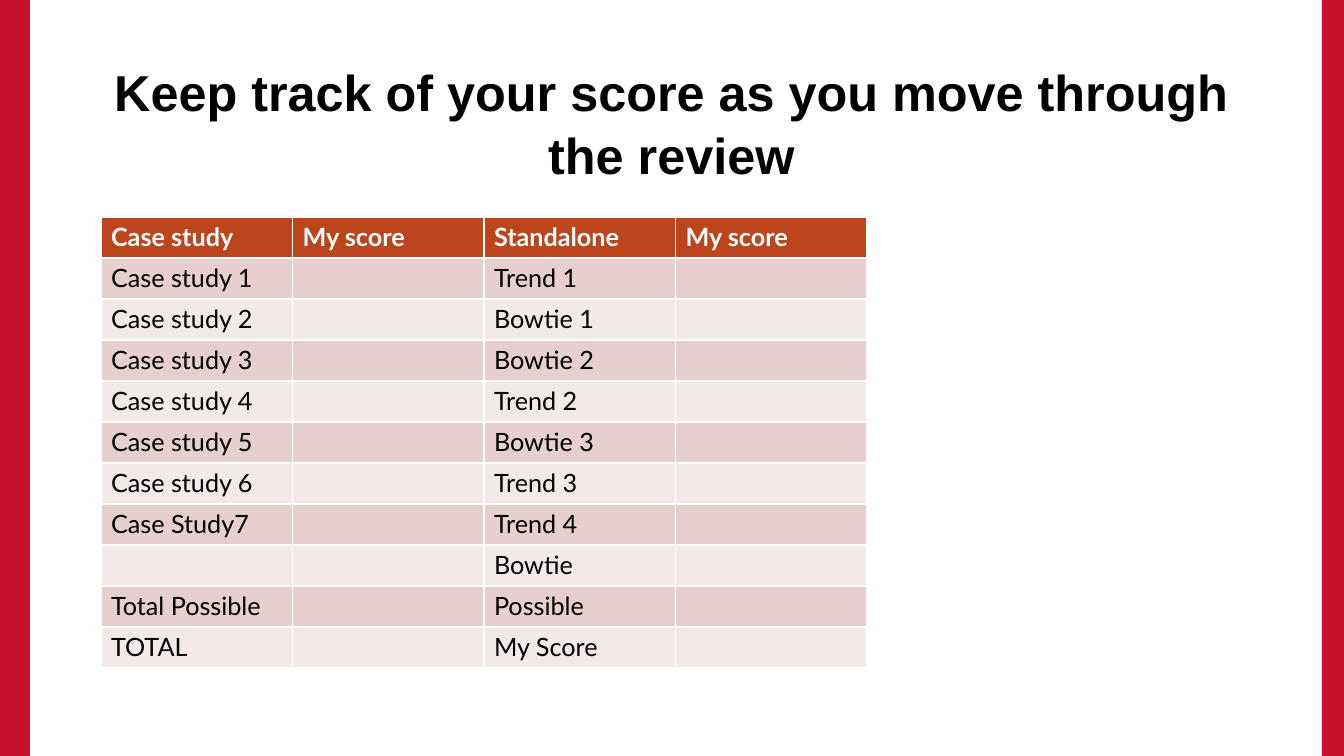
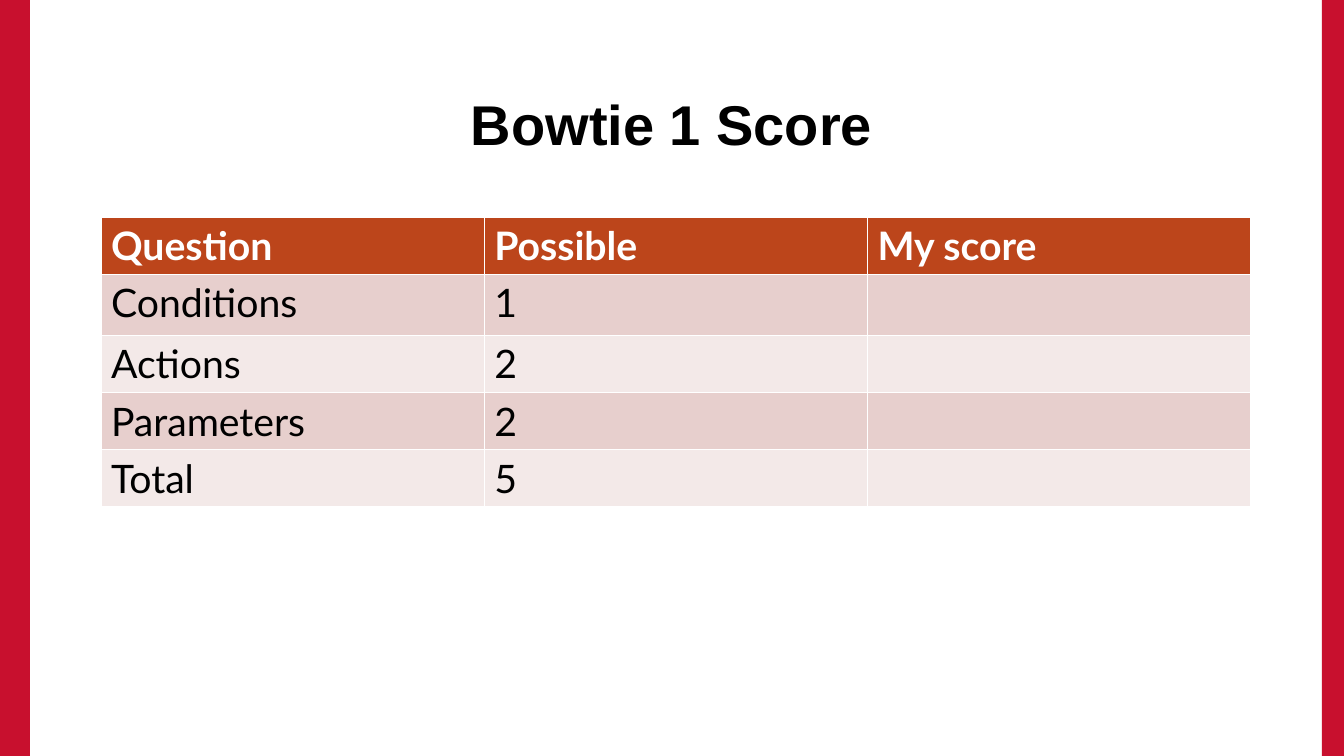
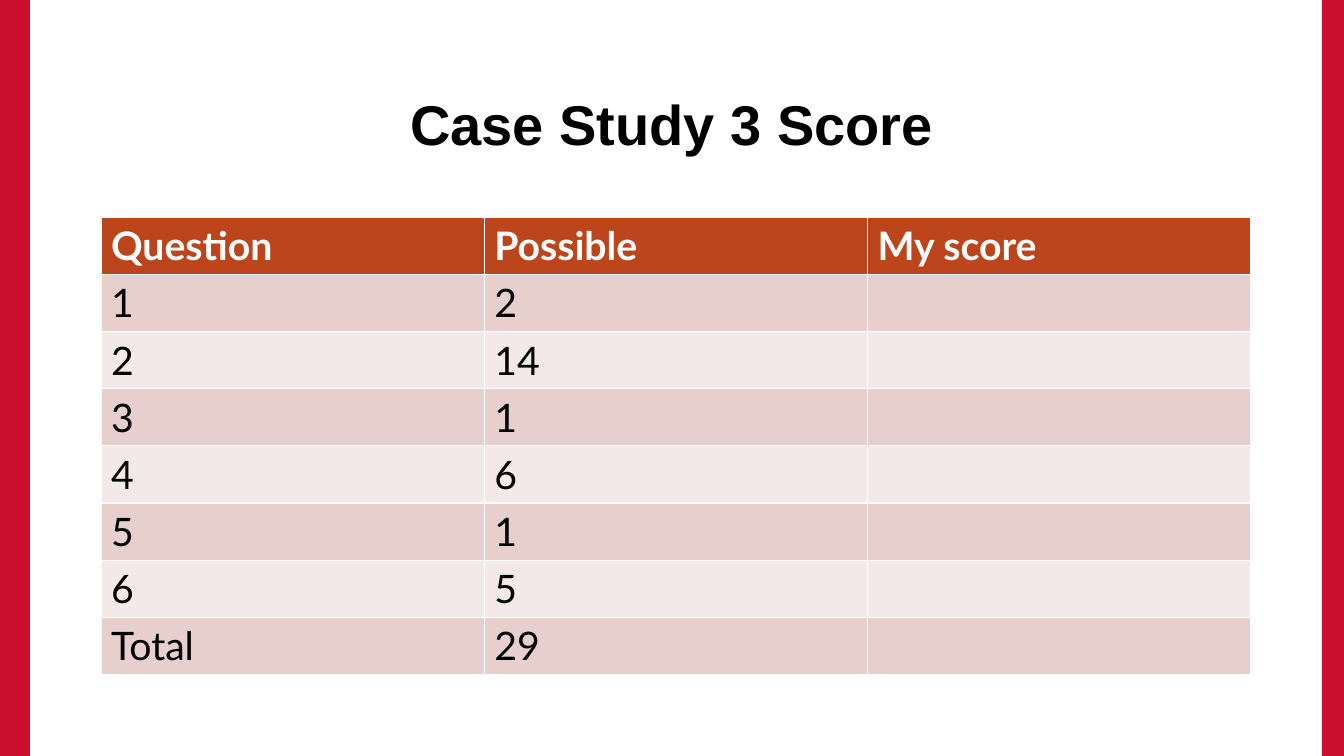
from pptx import Presentation
from pptx.dml.color import RGBColor
from pptx.enum.shapes import MSO_SHAPE
from pptx.enum.text import MSO_ANCHOR, PP_ALIGN
from pptx.util import Emu, Pt


def px(length):
    return Emu(round(length * 914400 / 100.8))


def color(value):
    return RGBColor.from_string(value)


class ScoreDeck:
    """Holds the shared style and the current slide of a score-sheet deck."""

    WIDTH, HEIGHT = 1344, 756
    LEFT_BAND, RIGHT_BAND = 30, 22
    RED, RUST = "C8102E", "BC451B"
    STRIPES = ("E7CFCD", "F3E9E8")
    BLACK, WHITE = "000000", "FFFFFF"
    TITLE_FONT, TABLE_FONT = "Arial", "Lato"
    MARGIN, TABLE_TOP = 101, 217

    def __init__(self):
        self.deck = Presentation()
        self.deck.slide_width = px(self.WIDTH)
        self.deck.slide_height = px(self.HEIGHT)
        self.page = None

    def add_page(self, title, title_size):
        self.page = self.deck.slides.add_slide(self.deck.slide_layouts[6])
        self.add_band(0, self.LEFT_BAND)
        self.add_band(self.WIDTH - self.RIGHT_BAND, self.RIGHT_BAND)
        self.add_title(title, title_size)

    def add_band(self, left, width):
        band = self.page.shapes.add_shape(
            MSO_SHAPE.RECTANGLE, px(left), 0, px(width), px(self.HEIGHT))
        band.shadow.inherit = False
        band.fill.solid()
        band.fill.fore_color.rgb = color(self.RED)
        band.line.fill.background()

    def add_title(self, text, size):
        box = self.page.shapes.add_textbox(
            px(self.MARGIN), px(68), px(1141), px(107))
        frame = box.text_frame
        frame.word_wrap = True
        frame.vertical_anchor = MSO_ANCHOR.MIDDLE
        para = frame.paragraphs[0]
        para.text = text
        para.alignment = PP_ALIGN.CENTER
        para.line_spacing = 1.05
        self.set_font(para, self.TITLE_FONT, size, self.BLACK, True)

    def set_font(self, para, name, size, ink, bold):
        para.font.name = name
        para.font.size = Pt(size)
        para.font.bold = bold
        para.font.color.rgb = color(ink)

    def add_score_table(self, rows, width, size, heights):
        table = self.page.shapes.add_table(
            len(rows), len(rows[0]), px(self.MARGIN), px(self.TABLE_TOP),
            px(width), px(sum(heights))).table
        for row, height in zip(table.rows, heights):
            row.height = px(height)
        for row_index, texts in enumerate(rows):
            is_header = row_index == 0
            fill = self.RUST if is_header else self.STRIPES[(row_index - 1) % 2]
            ink = self.WHITE if is_header else self.BLACK
            for column_index, text in enumerate(texts):
                cell = table.cell(row_index, column_index)
                cell.fill.solid()
                cell.fill.fore_color.rgb = color(fill)
                if text:
                    para = cell.text_frame.paragraphs[0]
                    para.text = text
                    self.set_font(para, self.TABLE_FONT, size, ink, is_header)

    def add_question_page(self, title, scores, heights):
        self.add_page(title, 40)
        rows = [("Question", "Possible", "My score")]
        rows += [(question, possible, "") for question, possible in scores]
        self.add_score_table(rows, 1150, 28, heights)

    def save(self):
        self.deck.save("out.pptx")


def main():
    score_deck = ScoreDeck()

    score_deck.add_page(
        "Keep track of your score as you move through the review", 36)
    tracked = [
        ("Case study 1", "Trend 1"),
        ("Case study 2", "Bowtie 1"),
        ("Case study 3", "Bowtie 2"),
        ("Case study 4", "Trend 2"),
        ("Case study 5", "Bowtie 3"),
        ("Case study 6", "Trend 3"),
        ("Case Study7", "Trend 4"),
        ("", "Bowtie"),
        ("Total Possible", "Possible"),
        ("TOTAL", "My Score"),
    ]
    rows = [("Case study", "My score", "Standalone", "My score")]
    rows += [(study, "", standalone, "") for study, standalone in tracked]
    score_deck.add_score_table(rows, 766, 18, [41] * len(rows))

    score_deck.add_question_page(
        "Bowtie 1 Score",
        [("Conditions", "1"), ("Actions", "2"), ("Parameters", "2"),
         ("Total", "5")],
        [57, 61, 57, 57, 57])

    score_deck.add_question_page(
        "Case Study 3 Score",
        [("1", "2"), ("2", "14"), ("3", "1"), ("4", "6"), ("5", "1"),
         ("6", "5"), ("Total", "29")],
        [57] * 8)

    score_deck.save()


if __name__ == "__main__":
    main()
